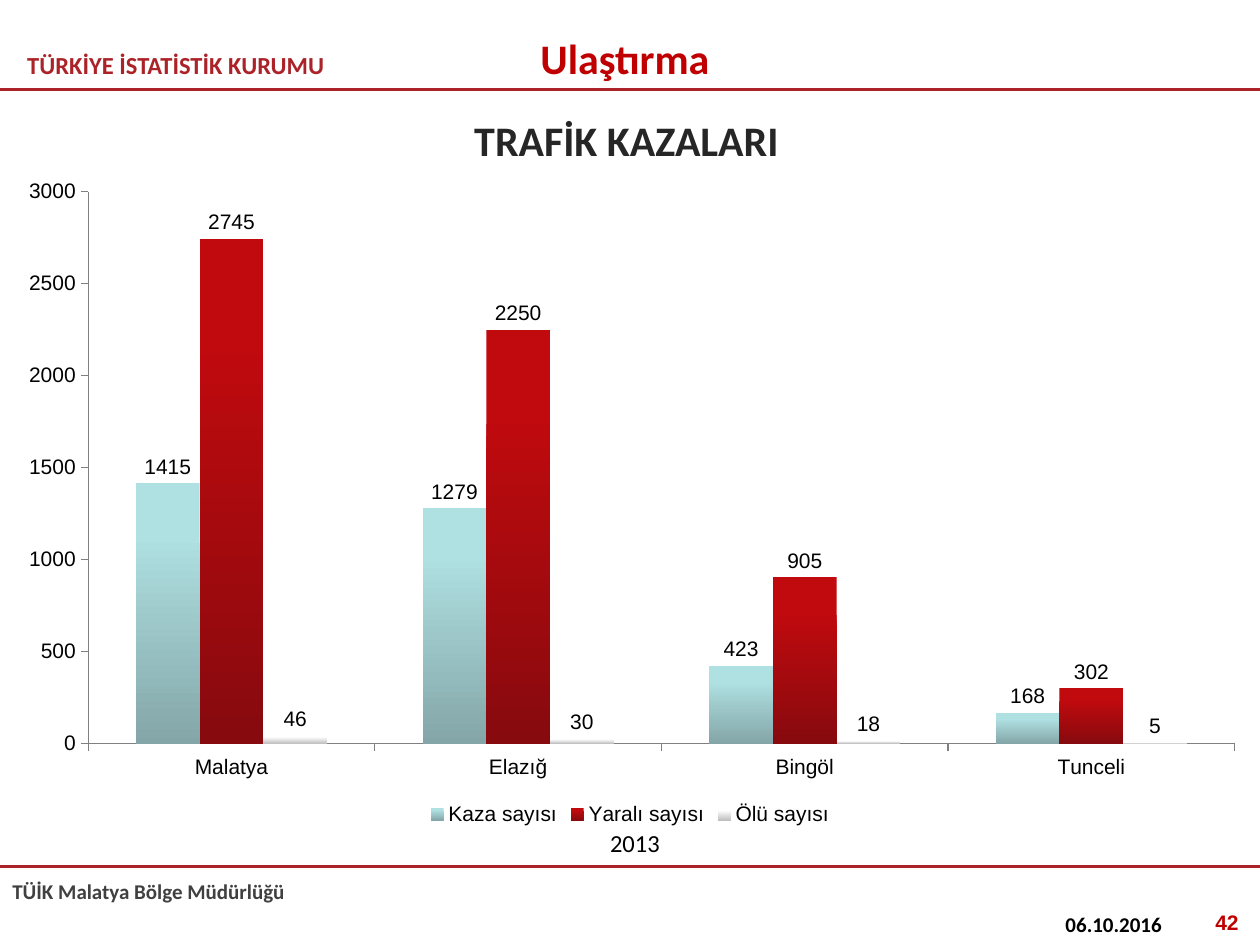
from lxml import etree
from pptx import Presentation
from pptx.chart.data import CategoryChartData
from pptx.dml.color import RGBColor
from pptx.enum.chart import XL_CHART_TYPE, XL_LABEL_POSITION, XL_LEGEND_POSITION, XL_TICK_MARK
from pptx.enum.shapes import MSO_CONNECTOR
from pptx.enum.text import MSO_ANCHOR, PP_ALIGN
from pptx.oxml.ns import qn
from pptx.util import Cm, Pt

COLUMNS = XL_CHART_TYPE.COLUMN_CLUSTERED
OUTSIDE_END = XL_LABEL_POSITION.OUTSIDE_END
LEGEND_BOTTOM = XL_LEGEND_POSITION.BOTTOM
TICK_OUTSIDE = XL_TICK_MARK.OUTSIDE
STRAIGHT = MSO_CONNECTOR.STRAIGHT
TOP, MIDDLE, BOTTOM = MSO_ANCHOR.TOP, MSO_ANCHOR.MIDDLE, MSO_ANCHOR.BOTTOM
LEFT, CENTER, RIGHT = PP_ALIGN.LEFT, PP_ALIGN.CENTER, PP_ALIGN.RIGHT

COLORS = {
    "rule": "AB2328",
    "accent": "C00000",
    "title": "262626",
    "footer": "404040",
    "text": "000000",
    "axis": "808080",
}
SLIDE_WIDTH, SLIDE_HEIGHT = 25.4, 19.05

CITIES = ["Malatya", "Elazığ", "Bingöl", "Tunceli"]
# name, values, gradient from top to bottom
SERIES = [
    ("Kaza sayısı", (1415, 1279, 423, 168), ("AFE0E2", "84A6A8")),
    ("Yaralı sayısı", (2745, 2250, 905, 302), ("C00A0E", "870A0E")),
    ("Ölü sayısı", (46, 30, 18, 5), ("FFFFFF", "C0C0C0")),
]


def rgb(name):
    return RGBColor.from_string(COLORS[name])


def style_font(font, size, color="text", name="Calibri", bold=False):
    font.size = Pt(size)
    font.name = name
    font.bold = bold
    font.color.rgb = rgb(color)


def write_text(text_frame, text, size, color, align=LEFT, anchor=TOP, font="Calibri"):
    text_frame.word_wrap = True
    text_frame.vertical_anchor = anchor
    paragraph = text_frame.paragraphs[0]
    paragraph.text = text
    paragraph.alignment = align
    style_font(paragraph.font, size, color, font, bold=True)


def add_text(slide, box, *content, **options):
    shape = slide.shapes.add_textbox(*map(Cm, box))
    write_text(shape.text_frame, *content, **options)


def add_title(slide, box, text):
    title = slide.shapes.title
    title.left, title.top, title.width, title.height = map(Cm, box)
    write_text(title.text_frame, text, 24, "title", CENTER, MIDDLE)


def add_rule(slide, top):
    rule = slide.shapes.add_connector(STRAIGHT, 0, Cm(top), Cm(SLIDE_WIDTH), Cm(top))
    rule.line.color.rgb = rgb("rule")
    rule.line.width = Pt(1.5)
    etree.SubElement(rule._element.spPr, qn("a:effectLst"))


def style_axis(axis):
    axis.has_major_gridlines = False
    axis.major_tick_mark = TICK_OUTSIDE
    axis.format.line.color.rgb = rgb("axis")
    style_font(axis.tick_labels.font, 12, name="Arial")


def style_series(series, gradient):
    fill = series.format.fill
    fill.gradient()
    fill.gradient_angle = 270
    for stop, color, position in zip(fill.gradient_stops, gradient, (0.2, 1)):
        stop.color.rgb = RGBColor.from_string(color)
        stop.position = position
    series.invert_if_negative = False
    labels = series.data_labels
    labels.show_value = True
    labels.position = OUTSIDE_END
    style_font(labels.font, 12, name="Arial")


def place_plot(chart, **fractions):
    """Fix the inner plot area as fractions of the chart."""
    plot_area = chart._chartSpace.chart.plotArea
    for old_layout in plot_area.findall(qn("c:layout")):
        plot_area.remove(old_layout)
    layout = etree.Element(qn("c:layout"))
    plot_area.insert(0, layout)
    manual = etree.SubElement(layout, qn("c:manualLayout"))
    settings = {"layoutTarget": "inner", "xMode": "edge", "yMode": "edge", **fractions}
    for tag, value in settings.items():
        etree.SubElement(manual, qn(f"c:{tag}")).set("val", str(value))


def add_accident_chart(slide, box):
    data = CategoryChartData()
    data.categories = CITIES
    for name, values, _ in SERIES:
        data.add_series(name, values)
    chart = slide.shapes.add_chart(COLUMNS, *map(Cm, box), data).chart
    chart.has_title = False
    style_font(chart.font, 12, name="Arial")
    chart.has_legend = True
    chart.legend.position = LEGEND_BOTTOM
    chart.legend.include_in_layout = False
    style_font(chart.legend.font, 12, name="Arial")

    style_axis(chart.category_axis)
    style_axis(chart.value_axis)
    chart.value_axis.minimum_scale = 0
    chart.value_axis.maximum_scale = 3000
    chart.value_axis.major_unit = 500

    plot = chart.plots[0]
    plot.gap_width = 150
    plot.overlap = 0
    plot.vary_by_categories = False
    for series, (_, _, gradient) in zip(plot.series, SERIES):
        style_series(series, gradient)
    place_plot(chart, x=0.07, y=0.04, w=0.91, h=0.83)


def add_year_table(slide, box, widths):
    table = slide.shapes.add_table(1, len(widths), *map(Cm, box)).table
    table.first_row = False
    table.horz_banding = False
    for column, width, text in zip(table.columns, widths, ("", "2013", "")):
        column.width = Cm(width)
        cell = table.cell(0, len(widths) // 2 if text else 0)
    for cell, text in zip(table.rows[0].cells, ("", "2013", "")):
        cell.fill.background()
        cell.margin_left = cell.margin_right = cell.margin_top = cell.margin_bottom = 0
        cell.vertical_anchor = BOTTOM
        paragraph = cell.text_frame.paragraphs[0]
        paragraph.alignment = CENTER
        if text:
            paragraph.text = text
            style_font(paragraph.font, 14)
        else:
            etree.SubElement(paragraph._p, qn("a:endParaRPr")).set("sz", "1000")


def main():
    presentation = Presentation()
    presentation.slide_width = Cm(SLIDE_WIDTH)
    presentation.slide_height = Cm(SLIDE_HEIGHT)
    slide = presentation.slides.add_slide(presentation.slide_layouts[5])

    add_text(slide, (0.3, 0.8, 9, 1), "TÜRKİYE İSTATİSTİK KURUMU", 14, "rule", anchor=MIDDLE)
    add_text(slide, (0, 17.58, 10.9, 0.76), "TÜİK Malatya Bölge Müdürlüğü", 12, "footer")
    add_rule(slide, 1.8)
    add_rule(slide, 17.47)
    add_title(slide, (1.2, 1.52, 22.86, 2.6), "TRAFİK KAZALARI")
    add_text(slide, (21.23, 18.26, 3, 0.79), "06.10.2016", 12, "text")
    add_text(slide, (23.5, 18.21, 1.72, 0.84), "42", 12, "accent", RIGHT, font="Arial")
    add_text(slide, (7.7, 0.53, 9.8, 1.27), "Ulaştırma", 24, "accent", CENTER, MIDDLE)
    add_accident_chart(slide, (0, 3.33, SLIDE_WIDTH, 13.41))
    add_year_table(slide, (-0.2, 16.71, 25.6, 0.58), (8.53, 8.94, 8.13))
    presentation.save("out.pptx")


if __name__ == "__main__":
    main()
